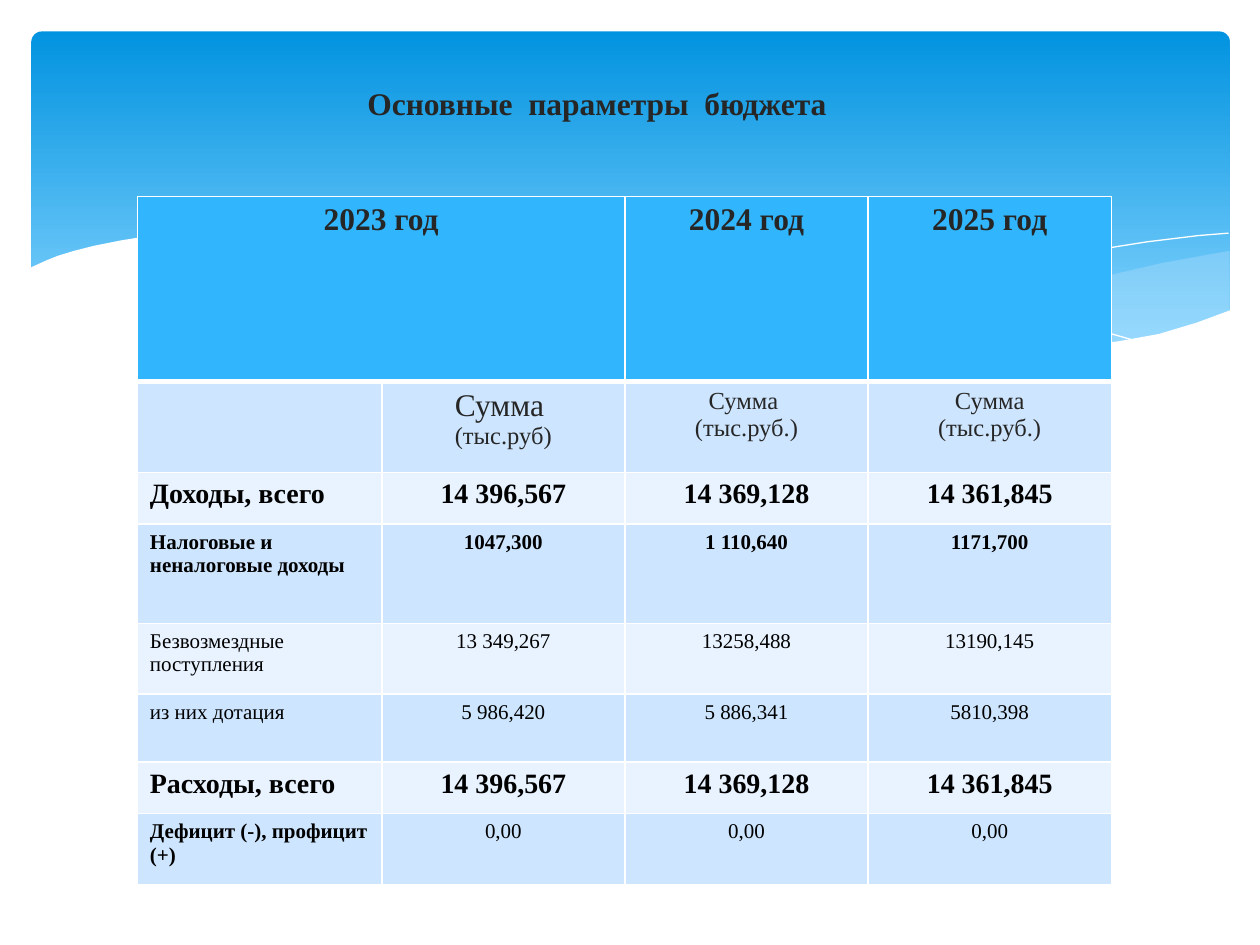
import pptx
import pptx.dml.color
import pptx.enum.shapes
import pptx.enum.text
import pptx.oxml
import pptx.oxml.ns
import pptx.util
import lxml.etree

EMU_PER_PX = 9144
FONT = "Times New Roman"
WHITE = pptx.dml.color.RGBColor(0xFF, 0xFF, 0xFF)
BLACK = pptx.dml.color.RGBColor(0x00, 0x00, 0x00)
DARK = pptx.dml.color.RGBColor(0x26, 0x26, 0x26)
SKY_TOP = pptx.dml.color.RGBColor(0x02, 0x93, 0xE0)
SKY_BOTTOM = pptx.dml.color.RGBColor(0x83, 0xD3, 0xFE)
WAVE = pptx.dml.color.RGBColor(0xC6, 0xE7, 0xFC)
HEADER = pptx.dml.color.RGBColor(0x31, 0xB6, 0xFD)
BAND_DARK = pptx.dml.color.RGBColor(0xCD, 0xE5, 0xFE)
BAND_LIGHT = pptx.dml.color.RGBColor(0xE8, 0xF3, 0xFF)
CENTER = pptx.enum.text.PP_ALIGN.CENTER
LEFT = pptx.enum.text.PP_ALIGN.LEFT


def px(*values):
    return [value * EMU_PER_PX for value in values]


def format_para(para, size, bold, color, align):
    para.alignment = align
    for span in para.runs:
        span.font.name = FONT
        span.font.size = pptx.util.Pt(size)
        span.font.bold = bold
        span.font.color.rgb = color


deck = pptx.Presentation()
deck.slide_width, deck.slide_height = px(1000, 750)
page = deck.slides.add_slide(deck.slide_layouts[6])

sky = page.shapes.add_shape(
    pptx.enum.shapes.MSO_SHAPE.ROUNDED_RECTANGLE, *px(25, 25, 951, 270))
sky.adjustments[0] = 0.03
sky.shadow.inherit = False
sky.line.fill.background()
sky.fill.gradient()
sky.fill.gradient_angle = 270
for stop, color, position in zip(
        sky.fill.gradient_stops, (SKY_TOP, SKY_BOTTOM), (0, 0.9)):
    stop.color.rgb = color
    stop.position = position

right_wave = [
    (976, 199), (948, 204), (921, 209), (891, 216), (861, 223), (805, 237),
    (753, 248), (706, 257), (661, 265), (691, 269), (732, 274), (769, 277),
    (803, 278), (835, 277), (863, 275), (889, 272), (913, 267), (935, 261),
    (949, 257), (963, 252), (976, 247)]
long_wave = [
    (893, 273), (837, 265), (775, 254), (706, 240), (629, 222), (584, 211),
    (541, 203), (501, 196), (465, 191), (420, 187), (380, 186), (344, 186),
    (313, 188), (286, 191), (323, 196), (362, 203), (404, 211), (449, 222),
    (530, 240), (601, 255), (650, 264), (695, 270), (736, 275), (773, 277),
    (807, 278), (838, 278), (867, 276), (893, 273)]
falling_line = [
    (309, 195), (328, 192), (353, 189), (387, 187), (433, 187), (469, 189),
    (510, 192), (556, 197), (608, 204), (665, 213), (727, 226), (795, 241),
    (868, 261), (907, 272)]
rising_line = [
    (613, 257), (652, 246), (695, 235), (748, 223), (806, 210), (866, 199),
    (910, 192), (951, 187), (975, 185)]
white_ground = [
    (977, 246), (950, 256), (920, 265), (887, 271), (850, 275), (809, 277),
    (761, 275), (708, 270), (647, 262), (579, 250), (503, 233), (447, 220),
    (391, 207), (339, 197), (292, 191), (250, 186), (211, 184), (177, 184),
    (146, 185), (119, 187), (95, 191), (75, 195), (59, 199), (46, 203),
    (36, 207), (23, 213), (23, 329), (977, 329)]

for points, fill_color, opacity in (
        (right_wave, WAVE, 29), (long_wave, WAVE, 40),
        (falling_line, None, 100), (rising_line, None, 100),
        (white_ground, WHITE, 100)):
    builder = page.shapes.build_freeform(*points[0], scale=EMU_PER_PX)
    builder.add_line_segments(points[1:], close=fill_color is not None)
    curve = builder.convert_to_shape()
    curve.shadow.inherit = False
    if fill_color is None:
        curve.fill.background()
        curve.line.color.rgb = WHITE
        curve.line.width = 0
        continue
    curve.line.fill.background()
    curve.fill.solid()
    curve.fill.fore_color.rgb = fill_color
    if opacity < 100:
        tint = curve.fill._xPr.find(".//" + pptx.oxml.ns.qn("a:srgbClr"))
        alpha = lxml.etree.SubElement(tint, pptx.oxml.ns.qn("a:alpha"))
        alpha.set("val", str(opacity * 1000))

rows = [
    (147, HEADER, ["2023 год", "", "2024 год", "2025 год"]),
    (72, BAND_DARK, ["", "Сумма \n(тыс.руб)", "Сумма \n(тыс.руб.)", "Сумма\n(тыс.руб.)"]),
    (41, BAND_LIGHT, ["Доходы, всего", "14 396,567", "14 369,128", "14 361,845"]),
    (79, BAND_DARK, ["Налоговые и неналоговые доходы", "1047,300", "1 110,640", "1171,700"]),
    (56, BAND_LIGHT, ["Безвозмездные  поступления", "13 349,267", "13258,488", "13190,145"]),
    (54, BAND_DARK, ["из них дотация", "5 986,420", "5 886,341", "5810,398"]),
    (41, BAND_LIGHT, ["Расходы, всего", "14 396,567", "14 369,128", "14 361,845"]),
    (56, BAND_DARK, ["Дефицит (-), профицит (+)", "0,00", "0,00", "0,00"]),
]
sizes = [18, 14, 16, 12, 12, 12, 16, 12]
bold_labels = {0, 2, 3, 6, 7}
bold_values = {0, 2, 3, 6}

table = page.shapes.add_table(len(rows), 4, *px(109, 156, 773, 546)).table
for column, width in zip(table.columns, px(194, 193, 193, 193)):
    column.width = width
for r, (height, band, texts) in enumerate(rows):
    table.rows[r].height = height * EMU_PER_PX
    for c, text in enumerate(texts):
        cell = table.cell(r, c)
        cell.text_frame.text = text
        bold = r in (bold_values if c else bold_labels)
        for para in cell.text_frame.paragraphs:
            format_para(para, sizes[r], bold, DARK if r < 2 else BLACK,
                        CENTER if c or r == 0 else LEFT)
        borders = cell._tc.get_or_add_tcPr()
        for side in ("L", "R", "T", "B"):
            thick = (r, side) in ((0, "B"), (1, "T"))
            borders.append(pptx.oxml.parse_xml(
                f'<a:ln{side} {pptx.oxml.ns.nsdecls("a")} w="{38100 if thick else 12700}">'
                f'<a:solidFill><a:srgbClr val="{WHITE}"/></a:solidFill></a:ln{side}>'))
        cell.fill.solid()
        cell.fill.fore_color.rgb = band
table.cell(1, 1).text_frame.paragraphs[0].runs[0].font.size = pptx.util.Pt(18)
table.cell(0, 0).merge(table.cell(0, 1))

title = page.shapes.add_textbox(*px(227, 62, 500, 40))
title.text_frame.word_wrap = True
title.text_frame.text = "Основные  параметры  бюджета "
format_para(title.text_frame.paragraphs[0], 18, True, DARK, CENTER)

deck.save("out.pptx")
